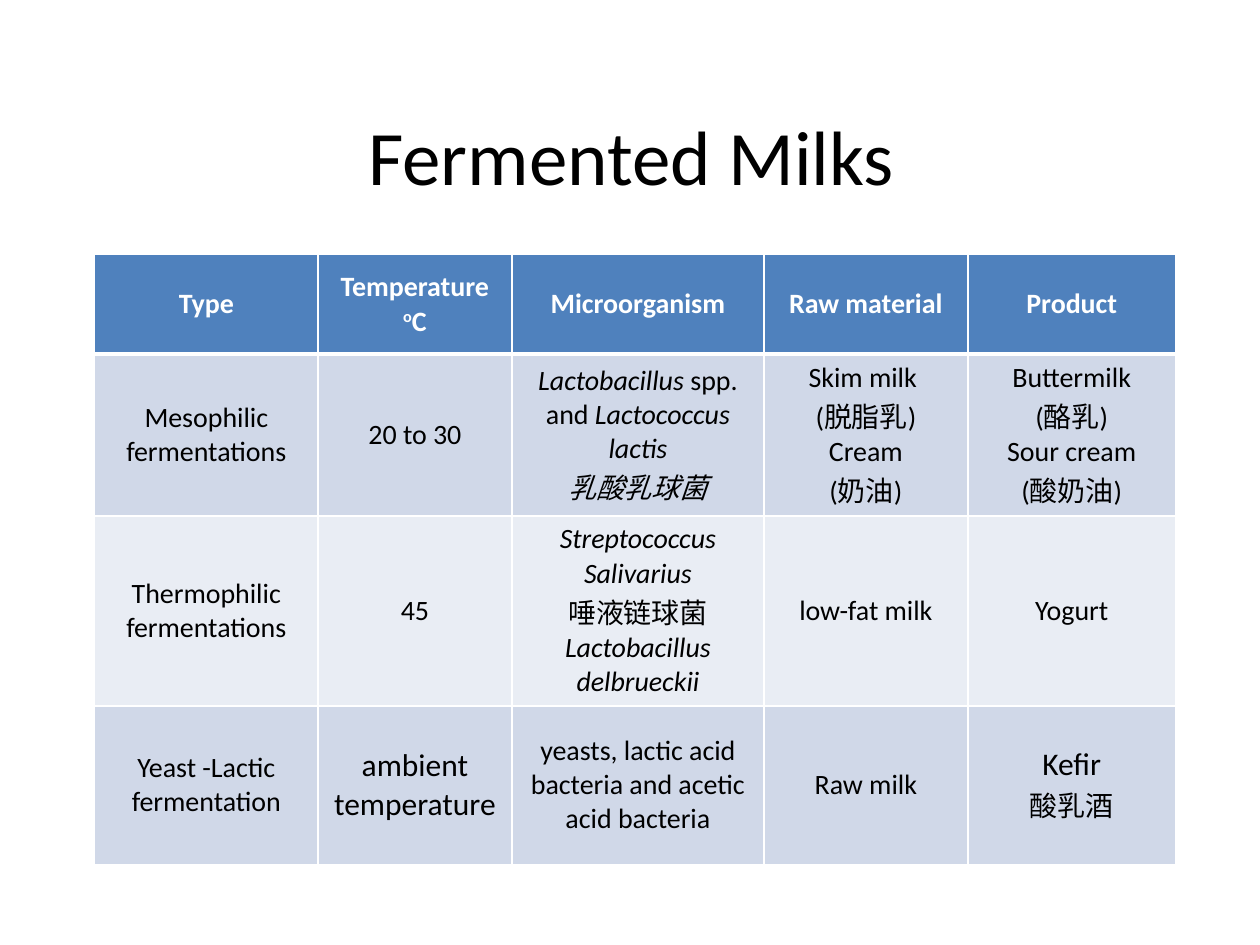
"""Build the Fermented Milks slide: a title above a table of fermentation types."""
from dataclasses import dataclass

from lxml.etree import SubElement
from pptx import Presentation
from pptx.dml.color import RGBColor
from pptx.enum.text import MSO_ANCHOR, PP_ALIGN
from pptx.oxml.ns import qn
from pptx.util import Cm, Pt


@dataclass(frozen=True)
class Theme:
    """Colours, font and type sizes of the slide."""
    font: str = "Calibri"
    text: str = "000000"
    white: str = "FFFFFF"
    header: str = "4F81BD"
    bands: tuple = ("E9EDF4", "D0D8E8")
    title_size: int = 44
    body_size: int = 16
    large_size: int = 18


THEME = Theme()
COL_WIDTHS = (4.5, 3.91, 5.08, 4.11, 4.19)
ROW_HEIGHTS = (2.01, 3.2, 3.2, 3.2)
MILKS = (
    ("Type", "Temperature\n^o^C", "Microorganism", "Raw material", "Product"),
    ("Mesophilic fermentations", "20 to 30",
     "*Lactobacillus* spp. and *Lactococcus lactis*\n*乳酸乳球菌*",
     "Skim milk \n(脱脂乳)\nCream\n(奶油)",
     "Buttermilk\n(酪乳)\nSour cream\n(酸奶油)"),
    ("Thermophilic fermentations", "45",
     "*Streptococcus*\n*Salivarius*\n唾液链球菌\n*Lactobacillus delbrueckii*",
     "low-fat milk", "Yogurt"),
    ("Yeast -Lactic fermentation", "+ambient temperature",
     "yeasts, lactic acid bacteria and acetic\nacid bacteria",
     "Raw milk", "+Kefir\n酸乳酒"),
)


def style_paragraph(p, size, color, bold=False):
    """Centre a paragraph and set its font."""
    p.alignment = PP_ALIGN.CENTER
    p.font.name = THEME.font
    p.font.size = Pt(size)
    p.font.bold = bold
    p.font.color.rgb = RGBColor.from_string(color)


def add_runs(p, text):
    """Add runs, reading *italic* and ^superscript^ marks."""
    for i, part in enumerate(text.split("*")):
        for j, piece in enumerate(part.split("^")):
            if piece:
                r = p.add_run()
                r.text = piece
                if i % 2:
                    r.font.italic = True
                if j % 2:
                    r.font._element.set("baseline", "30000")


def set_borders(cell, bottom):
    """Draw white cell borders, with the bottom one of the given width."""
    tcPr = cell._tc.get_or_add_tcPr()
    sides = {"lnL": 1, "lnR": 1, "lnT": 1, "lnB": bottom}
    for i, (side, width) in enumerate(sides.items()):
        ln = tcPr.makeelement(qn(f"a:{side}"), {"w": str(Pt(width))})
        fill = SubElement(ln, qn("a:solidFill"))
        SubElement(fill, qn("a:srgbClr"), val=THEME.white)
        tcPr.insert(i, ln)


def fill_cell(cell, text, row):
    """Write and format one cell; a leading + marks a large line."""
    header = row == 0
    cell.vertical_anchor = MSO_ANCHOR.MIDDLE
    cell.fill.solid()
    color = THEME.header if header else THEME.bands[row % 2]
    cell.fill.fore_color.rgb = RGBColor.from_string(color)
    set_borders(cell, 3 if header else 1)
    tf = cell.text_frame
    for i, line in enumerate(text.split("\n")):
        p = tf.add_paragraph() if i else tf.paragraphs[0]
        size = THEME.large_size if line.startswith("+") else THEME.body_size
        style_paragraph(p, size, THEME.white if header else THEME.text, header)
        add_runs(p, line.removeprefix("+"))


def add_title(s, text):
    """Place and format the title placeholder."""
    sp = s.shapes.title
    sp.left, sp.top, sp.width, sp.height = Cm(1.3), Cm(1.52), Cm(22.86), Cm(3.18)
    tf = sp.text_frame
    tf.text = text
    tf.vertical_anchor = MSO_ANCHOR.MIDDLE
    style_paragraph(tf.paragraphs[0], THEME.title_size, THEME.text)


def add_milk_table(s):
    """Add the table of fermented milks."""
    table = s.shapes.add_table(
        len(ROW_HEIGHTS), len(COL_WIDTHS), Cm(1.91), Cm(5.13),
        Cm(sum(COL_WIDTHS)), Cm(sum(ROW_HEIGHTS))).table
    for column, width in zip(table.columns, COL_WIDTHS):
        column.width = Cm(width)
    for i, (row, height) in enumerate(zip(table.rows, ROW_HEIGHTS)):
        row.height = Cm(height)
        for cell, text in zip(row.cells, MILKS[i]):
            fill_cell(cell, text, i)


def main():
    """Build and save the slide."""
    prs = Presentation()
    prs.slide_width, prs.slide_height = Cm(25.4), Cm(19.05)
    s = prs.slides.add_slide(prs.slide_layouts.get_by_name("Title Only"))
    add_title(s, "Fermented Milks")
    add_milk_table(s)
    prs.save("out.pptx")


if __name__ == "__main__":
    main()
